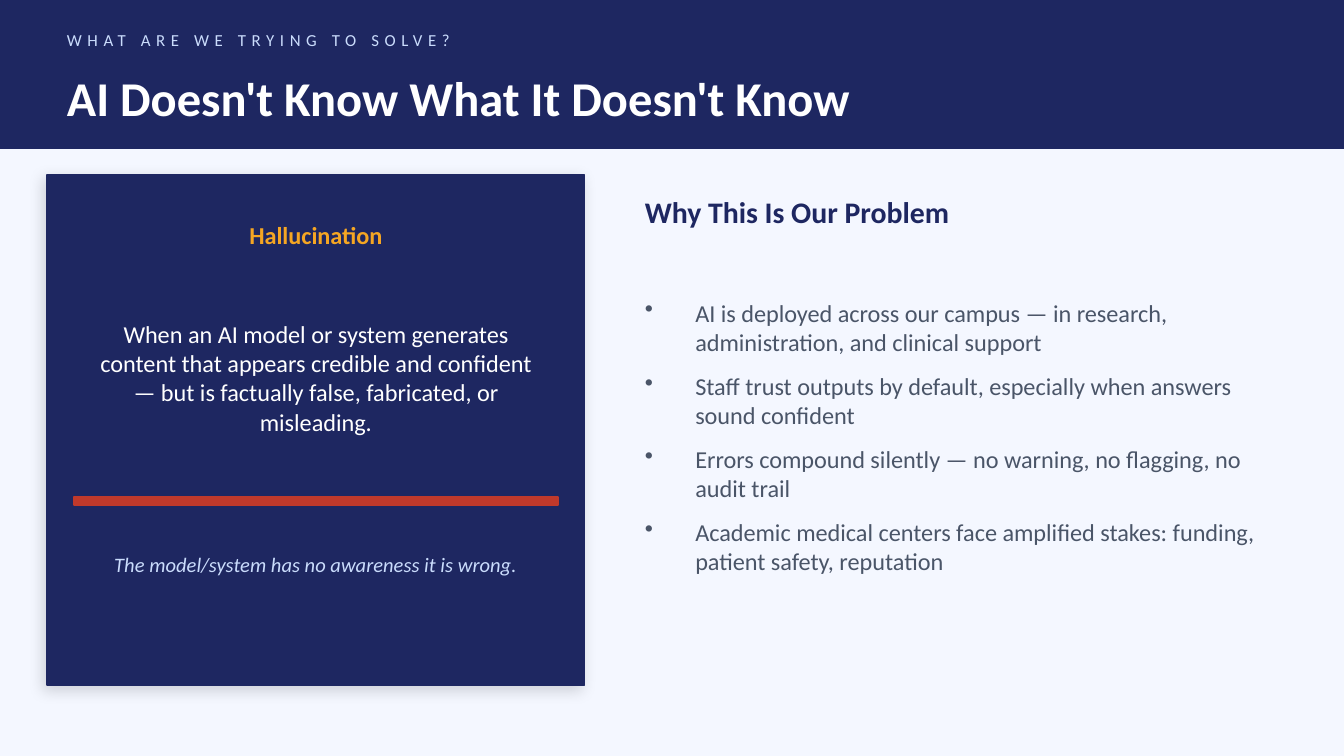
from lxml import etree
from pptx import Presentation
from pptx.dml.color import RGBColor
from pptx.enum import shapes, text
from pptx.oxml import ns
from pptx.util import Pt

NAVY = RGBColor(0x1E, 0x27, 0x61)
ICE = RGBColor(0xCA, 0xDC, 0xFC)
WHITE = RGBColor(0xFF, 0xFF, 0xFF)
AMBER = RGBColor(0xF5, 0xA6, 0x23)
RED = RGBColor(0xC0, 0x39, 0x2B)
SLATE = RGBColor(0x4A, 0x55, 0x68)
PALE = RGBColor(0xF4, 0xF7, 0xFF)

FONT = "Calibri"
HEADER_LEFT, HEADER_WIDTH = 28.8, 648
CARD_LEFT, CARD_WIDTH, CARD_PADDING = 25.2, 288, 14.4
INNER_LEFT, INNER_WIDTH = CARD_LEFT + CARD_PADDING, CARD_WIDTH - 2 * CARD_PADDING
REASONS_LEFT, REASONS_WIDTH = 338.4, 352.8
BULLET_INDENT = 27

REASONS = [
    "AI is deployed across our campus — in research, administration, and clinical support",
    "Staff trust outputs by default, especially when answers sound confident",
    "Errors compound silently — no warning, no flagging, no audit trail",
    "Academic medical centers face amplified stakes: funding, patient safety, reputation",
]


def add_block(slide, left, top, width, height, color):
    """Add a rectangle whose fill and outline share one colour."""
    block = slide.shapes.add_shape(
        shapes.MSO_SHAPE.RECTANGLE, Pt(left), Pt(top), Pt(width), Pt(height))
    block.shadow.inherit = False
    block.fill.solid()
    block.fill.fore_color.rgb = color
    block.line.color.rgb = color
    block.line.width = Pt(1)
    return block


def add_soft_shadow(block):
    effects = block.element.spPr.find(ns.qn("a:effectLst"))
    shadow = etree.SubElement(
        effects, ns.qn("a:outerShdw"), blurRad=str(Pt(8)), dist=str(Pt(3)),
        dir=str(135 * 60000), algn="bl", rotWithShape="0")
    color = etree.SubElement(shadow, ns.qn("a:srgbClr"), val="000000")
    etree.SubElement(color, ns.qn("a:alpha"), val="15000")


def add_text(slide, left, top, width, height, lines, size, color,
             bold=False, italic=False, align=text.PP_ALIGN.LEFT):
    """Add a wrapped, vertically centred text box and return its frame."""
    frame = slide.shapes.add_textbox(
        Pt(left), Pt(top), Pt(width), Pt(height)).text_frame
    frame.word_wrap = True
    frame.vertical_anchor = text.MSO_ANCHOR.MIDDLE
    frame.text = "\n".join(lines)
    for paragraph in frame.paragraphs:
        paragraph.alignment = align
        for run in paragraph.runs:
            run.font.name = FONT
            run.font.size = Pt(size)
            run.font.bold = bold
            run.font.italic = italic
            run.font.color.rgb = color
    return frame


def add_bullet(paragraph):
    paragraph.space_after = Pt(8)
    properties = paragraph._p.get_or_add_pPr()
    properties.set("marL", str(Pt(BULLET_INDENT)))
    properties.set("indent", str(-Pt(BULLET_INDENT)))
    etree.SubElement(properties, ns.qn("a:buChar"), char="•")


def add_header(slide):
    add_block(slide, 0, 0, 720, 79.2, NAVY)
    kicker = add_text(slide, HEADER_LEFT, 7.2, HEADER_WIDTH, 28.8,
                      ["WHAT ARE WE TRYING TO SOLVE?"], 9, ICE)
    kicker.paragraphs[0].runs[0].font._element.set("spc", "300")
    add_text(slide, HEADER_LEFT, 32.4, HEADER_WIDTH, 39.6,
             ["AI Doesn't Know What It Doesn't Know"], 26, WHITE, bold=True)


def add_definition_card(slide):
    center = text.PP_ALIGN.CENTER
    add_soft_shadow(add_block(slide, CARD_LEFT, 93.6, CARD_WIDTH, 273.6, NAVY))
    add_text(slide, INNER_LEFT, 111.6, INNER_WIDTH, 28.8,
             ["Hallucination"], 13, AMBER, bold=True, align=center)
    add_text(slide, INNER_LEFT, 155.5, INNER_WIDTH, 93.6,
             ["When an AI model or system generates content that appears credible "
              "and confident — but is factually false, fabricated, or misleading."],
             13, WHITE, align=center)
    add_block(slide, INNER_LEFT, 266.4, INNER_WIDTH, 4.32, RED)
    add_text(slide, INNER_LEFT, 277.2, INNER_WIDTH, 50.4,
             ["The model/system has no awareness it is wrong."],
             11, ICE, italic=True, align=center)


def add_reasons(slide):
    add_text(slide, REASONS_LEFT, 97.2, REASONS_WIDTH, 32.4,
             ["Why This Is Our Problem"], 16, NAVY, bold=True)
    reasons = add_text(slide, REASONS_LEFT, 133.2, REASONS_WIDTH, 201.6,
                       REASONS, 13, SLATE)
    for paragraph in reasons.paragraphs:
        add_bullet(paragraph)


def main():
    deck = Presentation()
    deck.slide_width, deck.slide_height = Pt(720), Pt(405)
    slide = deck.slides.add_slide(deck.slide_layouts[6])
    slide.background.fill.solid()
    slide.background.fill.fore_color.rgb = PALE
    add_header(slide)
    add_definition_card(slide)
    add_reasons(slide)
    deck.save("out.pptx")


if __name__ == "__main__":
    main()
